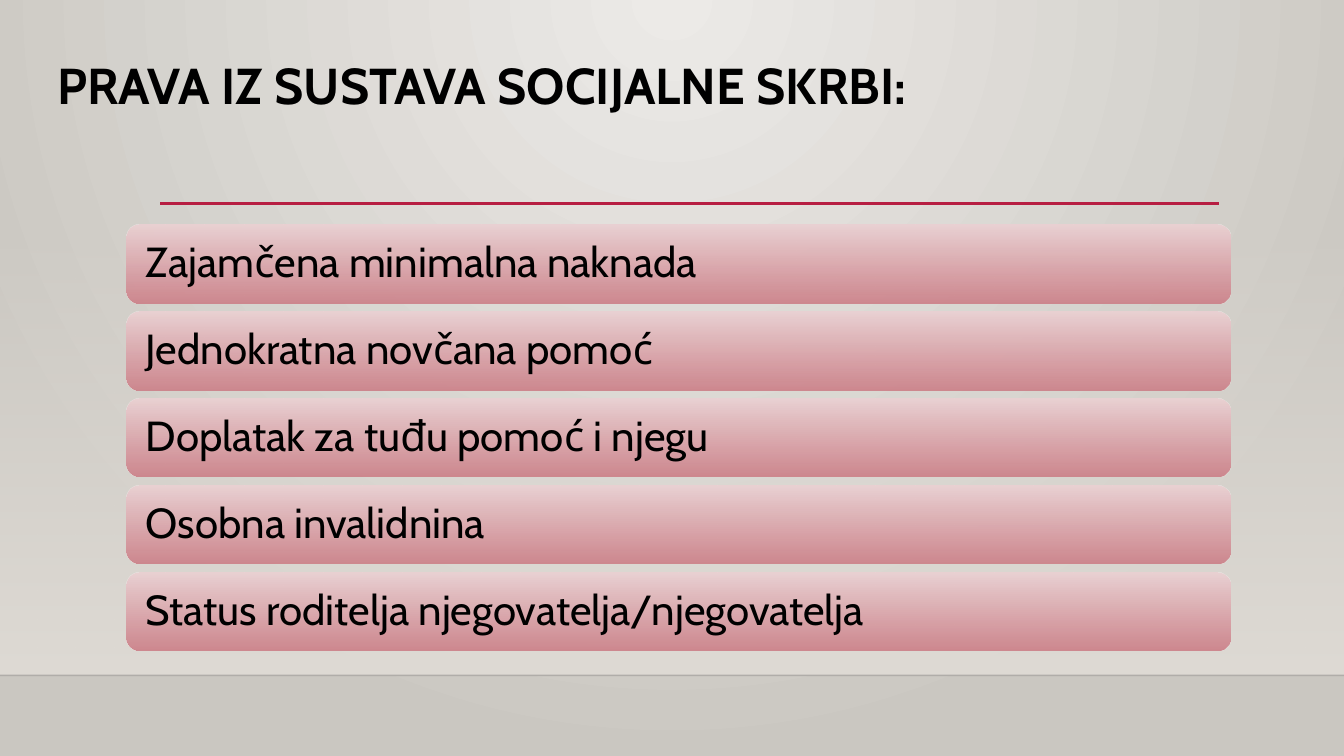
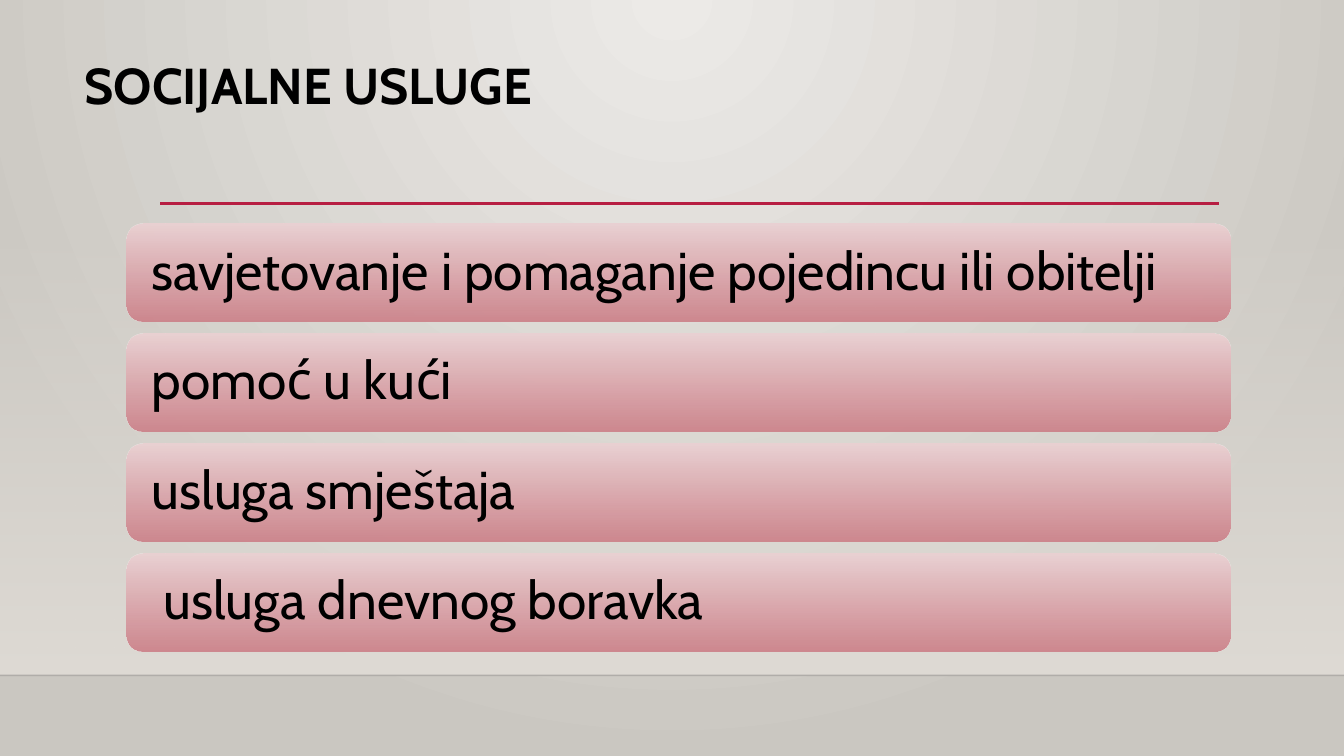
from pptx import Presentation
from pptx.dml.color import RGBColor as RGB
from pptx.enum.shapes import MSO_CONNECTOR as CONN, MSO_SHAPE as SHAPE
from pptx.enum.text import MSO_ANCHOR as ANCHOR, PP_ALIGN as ALIGN
from pptx.oxml.ns import qn
from pptx.util import Cm, Pt
from lxml.etree import SubElement

# Content: bar heights and gaps in cm, bar text sizes in points
SLIDES = [
    dict(title="PRAVA IZ SUSTAVA SOCIJALNE SKRBI:", title_left=1.19,
         top=5.67, height=1.97, gap=0.22, inset=0.4, size=30,
         bars=["Zajamčena minimalna naknada",
               "Jednokratna novčana pomoć",
               "Doplatak za tuđu pomoć i njegu",
               "Osobna invalidnina",
               "Status roditelja njegovatelja/njegovatelja"]),
    dict(title="SOCIJALNE USLUGE", title_left=1.88,
         top=5.64, height=2.47, gap=0.3, inset=0.52, size=38,
         bars=["savjetovanje i pomaganje pojedincu ili obitelji",
               "pomoć u kući",
               "usluga smještaja",
               " usluga dnevnog boravka"]),
]

# Theme: a gradient is a list of (colour, opacity in percent)
THEME = dict(
    font="Cabin", text="000000", title_size=36, line_spacing=0.9,
    backdrop=[("ECEAE7", 100), ("CAC7C1", 100)],
    wall=[("DFDBD5", 0), ("DFDBD5", 100)],
    bar=[("EAD1D3", 100), ("CD828A", 92)],
    rule=("B71E42", 100), floor=("000001", 20),
)
WIDTH, HEIGHT = 33.87, 19.05
WALL_TOP, FLOOR_Y = 5.61, 17.02
RULE_LEFT, RULE_RIGHT, RULE_Y = 4.04, 30.73, 5.13
BAR_LEFT, BAR_WIDTH = 3.18, 27.84
TITLE_TOP, TITLE_RIGHT, TITLE_HEIGHT = 1.42, 29.03, 3.63


def set_opacity(colors, values):
    for color, value in zip(colors, values):
        if value < 100:
            SubElement(color, qn("a:alpha"), val=str(value * 1000))


def set_gradient(fill, stops):
    fill.gradient()
    fill.gradient_angle = 270  # runs from top to bottom
    for stop, (color, _) in zip(fill.gradient_stops, stops):
        stop.color.rgb = RGB.from_string(color)


def set_backdrop(master):
    set_gradient(master.background.fill, THEME["backdrop"])
    grad = next(master.element.iter(qn("a:gradFill")))
    grad.remove(grad.find(qn("a:lin")))
    circle = SubElement(grad, qn("a:path"), path="circle")
    SubElement(circle, qn("a:fillToRect"), l="43000", t="0", r="43000", b="100000")


def add_block(s, kind, box, stops):
    sp = s.shapes.add_shape(kind, *map(Cm, box))
    sp.shadow.inherit = False
    sp.line.fill.background()
    set_gradient(sp.fill, stops)
    set_opacity(sp.element.spPr.iter(qn("a:srgbClr")), [o for _, o in stops])
    return sp


def add_rule(s, left, right, y, paint, width):
    color, opacity = paint
    line = s.shapes.add_connector(CONN.STRAIGHT, Cm(left), Cm(y), Cm(right), Cm(y))
    line.line.color.rgb = RGB.from_string(color)
    line.line.width = Pt(width)
    sp_pr = line.element.spPr
    set_opacity(sp_pr.iter(qn("a:srgbClr")), [opacity])
    SubElement(sp_pr, qn("a:effectLst"))


def write(sp, text, size, bold=False, **frame):
    tf = sp.text_frame
    for name, value in dict(word_wrap=True, **frame).items():
        setattr(tf, name, value)
    p = tf.paragraphs[0]
    p.alignment, p.line_spacing = ALIGN.LEFT, THEME["line_spacing"]
    r = p.add_run()
    r.text = text
    for name, value in dict(name=THEME["font"], size=Pt(size), bold=bold).items():
        setattr(r.font, name, value)
    r.font.color.rgb = RGB.from_string(THEME["text"])


def add_frame(s):
    """Wall, floor line and the red rule that every slide has."""
    add_block(s, SHAPE.RECTANGLE, (0, WALL_TOP, WIDTH, FLOOR_Y - WALL_TOP), THEME["wall"])
    add_rule(s, 0, WIDTH, FLOOR_Y, THEME["floor"], 1)
    add_rule(s, RULE_LEFT, RULE_RIGHT, RULE_Y, THEME["rule"], 2.5)


def add_title(s, text, left):
    box = (left, TITLE_TOP, TITLE_RIGHT - left, TITLE_HEIGHT)
    write(s.shapes.add_textbox(*map(Cm, box)), text, THEME["title_size"], bold=True)


def add_bars(s, data):
    inset = Cm(data["inset"])
    for i, text in enumerate(data["bars"]):
        top = data["top"] + i * (data["height"] + data["gap"])
        bar = add_block(s, SHAPE.ROUNDED_RECTANGLE,
                        (BAR_LEFT, top, BAR_WIDTH, data["height"]), THEME["bar"])
        write(bar, text, data["size"], vertical_anchor=ANCHOR.MIDDLE,
              margin_left=inset, margin_right=inset, margin_top=0, margin_bottom=0)


def main():
    prs = Presentation()
    prs.slide_width, prs.slide_height = Cm(WIDTH), Cm(HEIGHT)
    set_backdrop(prs.slide_master)
    for data in SLIDES:
        s = prs.slides.add_slide(prs.slide_layouts[6])
        add_frame(s)
        add_title(s, data["title"], data["title_left"])
        add_bars(s, data)
    prs.save("out.pptx")


if __name__ == "__main__":
    main()
